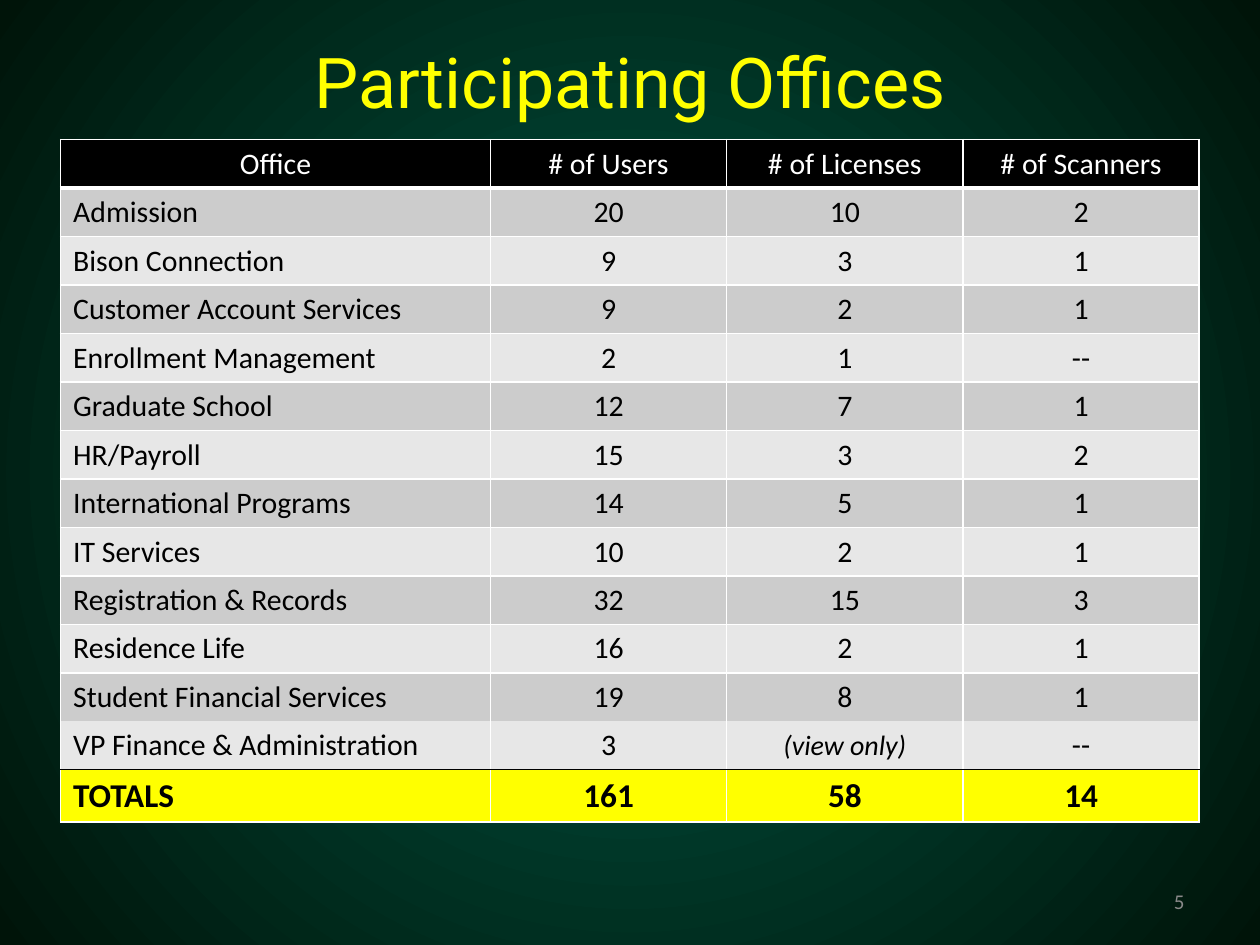
from lxml import etree
from pptx import Presentation
from pptx.dml.color import RGBColor
from pptx.enum.text import MSO_ANCHOR, PP_ALIGN
from pptx.oxml.ns import qn
from pptx.util import Pt

LEFT, CENTER, RIGHT = PP_ALIGN.LEFT, PP_ALIGN.CENTER, PP_ALIGN.RIGHT
MIDDLE = MSO_ANCHOR.MIDDLE
WHITE, BLACK, YELLOW = "FFFFFF", "000000", "FFFF00"


def color(value):
    return RGBColor.from_string(value)


def write(holder, text, alignment, font_name, size, text_color):
    holder.vertical_anchor = MIDDLE
    paragraph = holder.text_frame.paragraphs[0] if hasattr(holder, "text_frame") else holder.paragraphs[0]
    paragraph.text = text
    paragraph.alignment = alignment
    paragraph.font.name = font_name
    paragraph.font.size = Pt(size)
    paragraph.font.color.rgb = color(text_color)
    return paragraph


presentation = Presentation()
presentation.slide_width = Pt(720)
presentation.slide_height = Pt(540)
slide = presentation.slides.add_slide(presentation.slide_layouts[6])

background = slide.background.fill
background.gradient()
for stop, position, value in zip(background.gradient_stops, (0.02, 1), ("005643", "001409")):
    stop.position = position
    stop.color.rgb = color(value)
gradient = slide.element.find(".//" + qn("a:gradFill"))
gradient.remove(gradient.find(qn("a:lin")))
circle = etree.SubElement(gradient, qn("a:path"), path="circle")
etree.SubElement(circle, qn("a:fillToRect"), l="50000", t="50000", r="50000", b="50000")

labels = [
    (36, 18, 648, 56.16, "Participating Offices", CENTER, "Roboto", 40, YELLOW),
    (516, 500.5, 168, 28.75, "5", RIGHT, "Calibri", 12, "898989"),
]
for left, top, width, height, *content in labels:
    text_box = slide.shapes.add_textbox(Pt(left), Pt(top), Pt(width), Pt(height))
    text_box.text_frame.word_wrap = True
    write(text_box.text_frame, *content)

rows = [
    ("Office", "# of Users", "# of Licenses", "# of Scanners"),
    ("Admission", "20", "10", "2"),
    ("Bison Connection", "9", "3", "1"),
    ("Customer Account Services", "9", "2", "1"),
    ("Enrollment Management", "2", "1", "--"),
    ("Graduate School", "12", "7", "1"),
    ("HR/Payroll", "15", "3", "2"),
    ("International Programs", "14", "5", "1"),
    ("IT Services", "10", "2", "1"),
    ("Registration & Records", "32", "15", "3"),
    ("Residence Life", "16", "2", "1"),
    ("Student Financial Services", "19", "8", "1"),
    ("VP Finance & Administration", "3", "(view only)", "--"),
    ("TOTALS", "161", "58", "14"),
]
column_widths = [245.7, 135, 135, 135]
row_heights = [27.7] * 13 + [29.9]
last = len(rows) - 1

table = slide.shapes.add_table(
    len(rows), len(column_widths), Pt(34.6), Pt(79.8), Pt(sum(column_widths)), Pt(sum(row_heights))
).table
table.first_row = False
table.horz_banding = False
for column, width in zip(table.columns, column_widths):
    column.width = Pt(width)

for row_index, values in enumerate(rows):
    table.rows[row_index].height = Pt(row_heights[row_index])
    is_header = row_index == 0
    is_total = row_index == last
    if is_header:
        fill = BLACK
    elif is_total:
        fill = YELLOW
    else:
        fill = "CCCCCC" if row_index % 2 else "E7E7E7"
    top_border = {last - 1: None, last: (BLACK, 1)}.get(row_index, (WHITE, 1))
    bottom_border = {0: (WHITE, 3), last - 2: None, last - 1: (BLACK, 1)}.get(row_index, (WHITE, 1))
    borders = {"a:lnL": (WHITE, 1), "a:lnR": (WHITE, 1), "a:lnT": top_border, "a:lnB": bottom_border}

    for column_index, value in enumerate(values):
        cell = table.cell(row_index, column_index)
        is_note = value == "(view only)"
        size = 19 if is_total else 16 if is_note else 17
        alignment = CENTER if is_header or column_index else LEFT
        paragraph = write(cell, value, alignment, "Calibri", size, WHITE if is_header else BLACK)
        paragraph.font.bold = is_total
        paragraph.font.italic = is_note
        properties = cell._tc.get_or_add_tcPr()
        for tag, border in borders.items():
            if border is None:
                line = etree.SubElement(properties, qn(tag), w="0")
                etree.SubElement(line, qn("a:noFill"))
            else:
                border_color, border_width = border
                line = etree.SubElement(properties, qn(tag), w=str(Pt(border_width)))
                solid = etree.SubElement(line, qn("a:solidFill"))
                etree.SubElement(solid, qn("a:srgbClr"), val=border_color)
        cell.fill.solid()
        cell.fill.fore_color.rgb = color(fill)

presentation.save("out.pptx")
